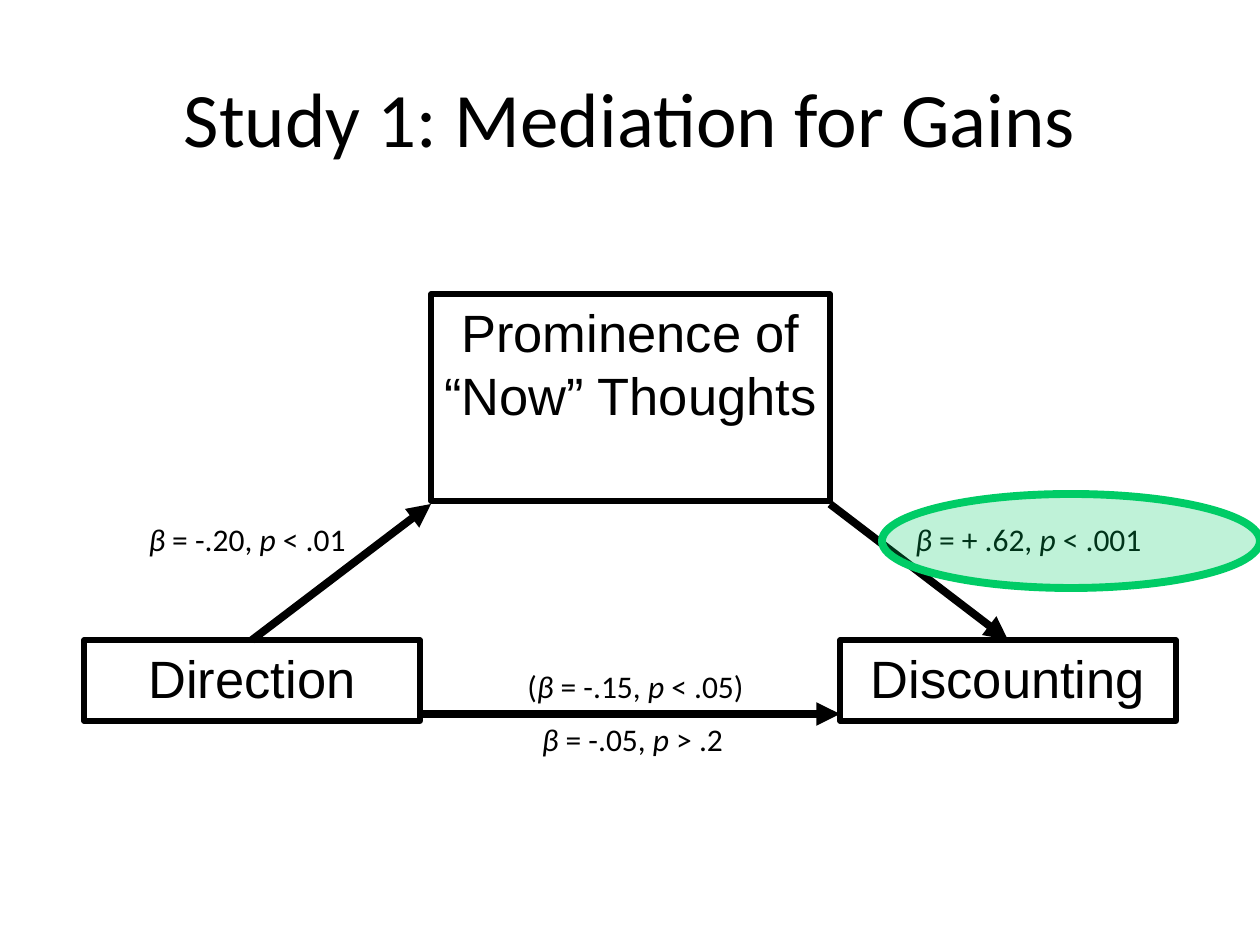
from lxml.etree import SubElement
from pptx import Presentation
from pptx.dml.color import RGBColor
from pptx.enum.shapes import MSO_CONNECTOR, MSO_SHAPE
from pptx.enum.text import MSO_ANCHOR, PP_ALIGN
from pptx.oxml.ns import qn
from pptx.util import Inches, Pt

SCALE = Inches(10) / 1260
COLORS = {"ink": "000000", "highlight": "00CC66"}
BOX_FONT = {"name": "Arial", "size": Pt(30)}
TITLE_FONT = {"name": "Calibri", "size": Pt(44)}
LABEL_FONT = {"name": "Calibri", "size": Pt(18)}

BOX_TOP, BOX_WIDTH, BOX_HEIGHT = 640, 336, 81
DIRECTION_LEFT, DISCOUNTING_LEFT = 84, 840
MEDIATOR_LEFT, MEDIATOR_WIDTH = 431, 399
ARROW_JOIN, DIRECT_PATH = 504, 714
LABEL_WIDTH, LABEL_HEIGHT = 305, 50


def px(*lengths):
    return [round(length * SCALE) for length in lengths]


def color(name):
    return RGBColor.from_string(COLORS[name])


def set_line(shape, name, width):
    shape.line.color.rgb = color(name)
    shape.line.width = Pt(width)


def write(shape, runs, font, alignment, anchor=MSO_ANCHOR.TOP):
    frame = shape.text_frame
    frame.word_wrap = True
    frame.vertical_anchor = anchor
    paragraph = frame.paragraphs[0]
    paragraph.alignment = alignment
    for text in runs:
        run = paragraph.add_run()
        run.text = text
        run.font.color.rgb = color("ink")
        for attribute, value in {**font, "italic": text in ("β", "p")}.items():
            setattr(run.font, attribute, value)


def add_box(slide, text, *place):
    box = slide.shapes.add_shape(MSO_SHAPE.RECTANGLE, *px(*place))
    box.shadow.inherit = False
    box.fill.background()
    set_line(box, "ink", 3)
    write(box, [text], BOX_FONT, PP_ALIGN.CENTER)


def add_arrow(slide, *ends):
    arrow = slide.shapes.add_connector(MSO_CONNECTOR.STRAIGHT, *px(*ends))
    set_line(arrow, "ink", 4.5)
    SubElement(arrow.line._get_or_add_ln(), qn("a:tailEnd"), type="triangle")
    SubElement(arrow._element.spPr, qn("a:effectLst"))


def add_title(slide, text):
    title = slide.shapes.add_textbox(*px(63, 38, 1134, 157))
    write(title, [text], TITLE_FONT, PP_ALIGN.CENTER, MSO_ANCHOR.MIDDLE)


def add_label(slide, left, top, alignment, runs):
    label = slide.shapes.add_textbox(*px(left, top, LABEL_WIDTH, LABEL_HEIGHT))
    write(label, runs, LABEL_FONT, alignment)


def add_highlight(slide, *place):
    oval = slide.shapes.add_shape(MSO_SHAPE.OVAL, *px(*place))
    oval.shadow.inherit = False
    oval.fill.solid()
    oval.fill.fore_color.rgb = color("highlight")
    fill_color = oval._element.spPr.find(qn("a:solidFill"))[0]
    SubElement(fill_color, qn("a:alpha"), val="25000")
    set_line(oval, "highlight", 4.5)


def main():
    presentation = Presentation()
    presentation.slide_width, presentation.slide_height = px(1260, 945)
    slide = presentation.slides.add_slide(presentation.slide_layouts[6])

    add_title(slide, "Study 1: Mediation for Gains")

    for text, left in (("Direction", DIRECTION_LEFT), ("Discounting", DISCOUNTING_LEFT)):
        add_box(slide, text, left, BOX_TOP, BOX_WIDTH, BOX_HEIGHT)
    add_box(slide, "Prominence of “Now” Thoughts", MEDIATOR_LEFT, 294, MEDIATOR_WIDTH, 207)

    half = BOX_WIDTH // 2
    add_arrow(slide, DIRECTION_LEFT + half, BOX_TOP, MEDIATOR_LEFT, ARROW_JOIN)
    add_arrow(slide, DIRECTION_LEFT + BOX_WIDTH, DIRECT_PATH, DISCOUNTING_LEFT, DIRECT_PATH)
    add_arrow(slide, MEDIATOR_LEFT + MEDIATOR_WIDTH, ARROW_JOIN, DISCOUNTING_LEFT + half, BOX_TOP)

    labels = (
        (53, 514, PP_ALIGN.RIGHT, ("β", " = -.20, ", "p", " < .01")),
        (903, 514, PP_ALIGN.LEFT, ("β", " = + .62, ", "p", " < .001")),
        (483, 661, PP_ALIGN.CENTER, ("(", "β", " = -.15, ", "p", " < .05)")),
        (480, 714, PP_ALIGN.CENTER, ("β", " = -.05, ", "p", " > .2")),
    )
    for label in labels:
        add_label(slide, *label)

    add_highlight(slide, 882, 494, 378, 94)
    presentation.save("out.pptx")


if __name__ == "__main__":
    main()
